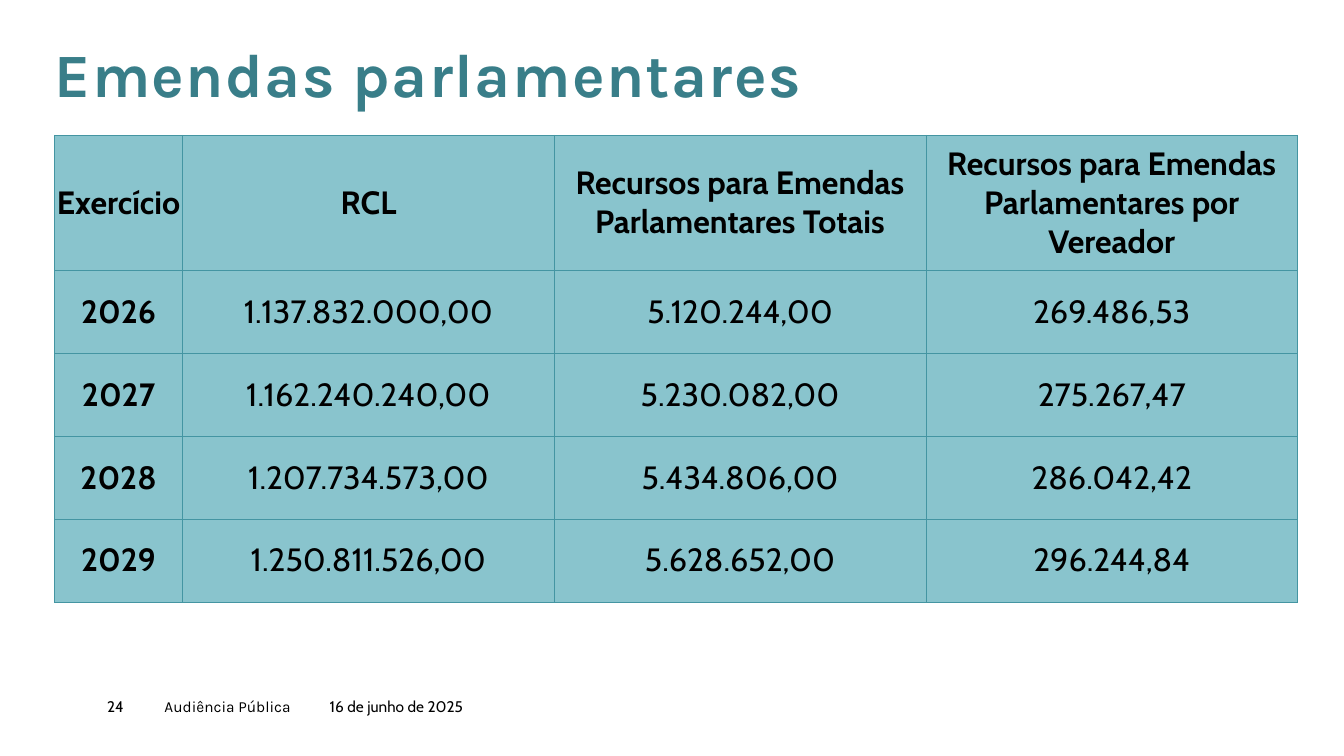
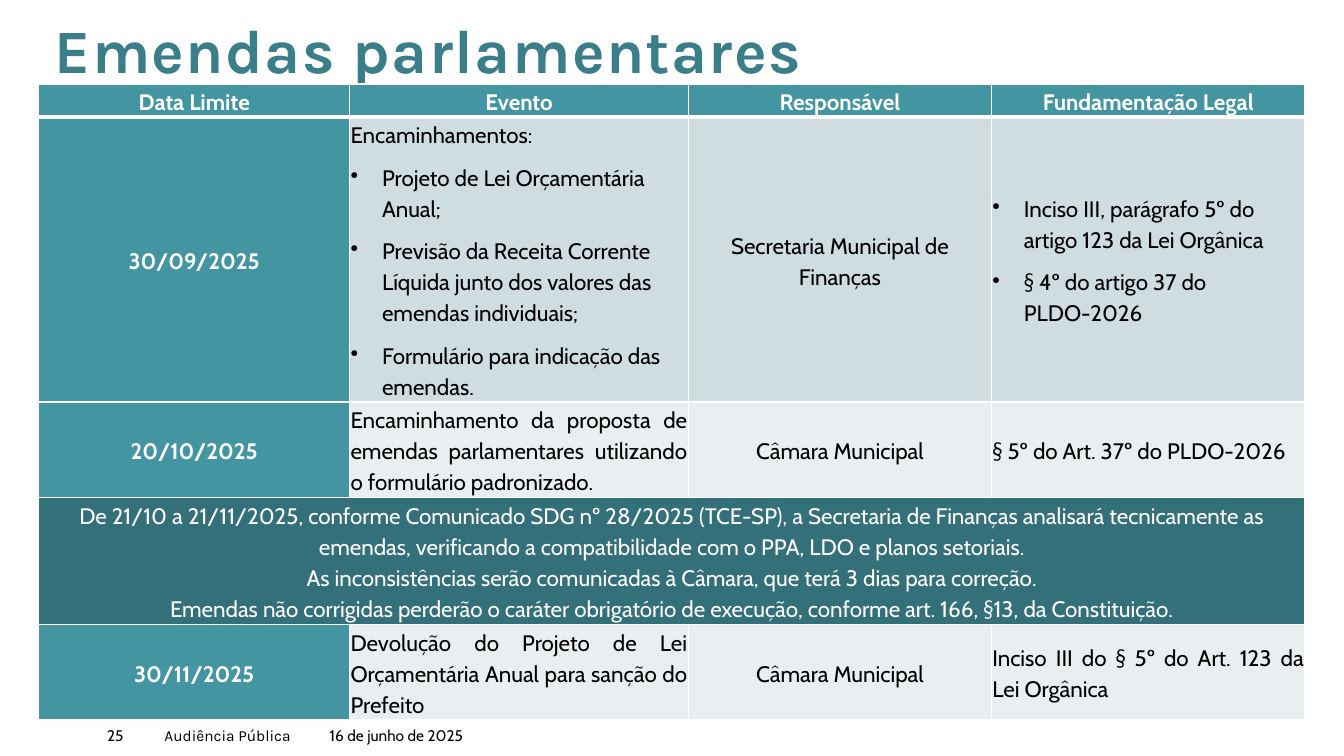
"""Build two slides on parliamentary amendments: yearly values and deadlines."""
import lxml.etree
import pptx
import pptx.dml.color
import pptx.enum.text
import pptx.oxml.ns
import pptx.util

Pt = pptx.util.Pt
RGBColor = pptx.dml.color.RGBColor
Align = pptx.enum.text.PP_ALIGN
Anchor = pptx.enum.text.MSO_ANCHOR
qn = pptx.oxml.ns.qn

BLACK = RGBColor(0x00, 0x00, 0x00)
WHITE = RGBColor(0xFF, 0xFF, 0xFF)
TITLE_TEAL = RGBColor(0x39, 0x7E, 0x89)
TEAL = RGBColor(0x44, 0x95, 0xA2)
DARK_TEAL = RGBColor(0x33, 0x70, 0x7A)
LIGHT_TEAL = RGBColor(0x89, 0xC4, 0xCD)
BAND_DARK = RGBColor(0xCF, 0xDD, 0xE0)
BAND_LIGHT = RGBColor(0xE9, 0xEF, 0xF0)

BODY_FONT = "Cabin"
TITLE_FONT = "Karla"
TITLE = "Emendas parlamentares"
BULLET = "• "
BULLET_INDENT = Pt(22.5)
CELL_MARGIN = Pt(0.7)

VALUES = [
    ["Exercício", "RCL", "Recursos para Emendas Parlamentares Totais",
     "Recursos para Emendas Parlamentares por Vereador"],
    ["2026", "1.137.832.000,00", "5.120.244,00", "269.486,53"],
    ["2027", "1.162.240.240,00", "5.230.082,00", "275.267,47"],
    ["2028", "1.207.734.573,00", "5.434.806,00", "286.042,42"],
    ["2029", "1.250.811.526,00", "5.628.652,00", "296.244,84"],
]

DEADLINES = [
    ["Data Limite", "Evento", "Responsável", "Fundamentação Legal"],
    ["30/09/2025",
     ["Encaminhamentos:",
      "• Projeto de Lei Orçamentária Anual;",
      "• Previsão da Receita Corrente Líquida junto dos valores das emendas individuais;",
      "• Formulário para indicação das emendas."],
     "Secretaria Municipal de Finanças",
     ["• Inciso III, parágrafo 5º do artigo 123 da Lei Orgânica",
      "• § 4º do artigo 37 do PLDO-2026"]],
    ["20/10/2025",
     "Encaminhamento da proposta de emendas parlamentares utilizando o formulário padronizado.",
     "Câmara Municipal", "§ 5º do Art. 37º do PLDO-2026"],
    ["De 21/10 a 21/11/2025, conforme Comunicado SDG nº 28/2025 (TCE-SP), a Secretaria de "
     "Finanças analisará tecnicamente as emendas, verificando a compatibilidade com o PPA, "
     "LDO e planos setoriais.\n"
     "As inconsistências serão comunicadas à Câmara, que terá 3 dias para correção.\n"
     "Emendas não corrigidas perderão o caráter obrigatório de execução, conforme art. 166, "
     "§13, da Constituição."],
    ["30/11/2025",
     "Devolução do Projeto de Lei Orçamentária Anual para sanção do Prefeito",
     "Câmara Municipal", "Inciso III do § 5º do Art. 123 da Lei Orgânica"],
]


def format_font(font, name, size, color, bold=False):
    """Set the face, size, colour and weight of a font."""
    font.name = name
    font.size = Pt(size)
    font.color.rgb = color
    font.bold = bold


def clear_margins(frame):
    """Remove the inner margins of a text frame and let it wrap."""
    frame.margin_left = frame.margin_top = frame.margin_right = frame.margin_bottom = 0
    frame.word_wrap = True
    frame.auto_size = pptx.enum.text.MSO_AUTO_SIZE.NONE


def add_titled_slide(presentation, title_top):
    """Add a slide with the shared title style."""
    slide = presentation.slides.add_slide(presentation.slide_layouts[5])
    title = slide.shapes.title
    title.left, title.top, title.width, title.height = Pt(39), Pt(title_top), Pt(765), Pt(64)
    frame = title.text_frame
    clear_margins(frame)
    frame.vertical_anchor = Anchor.BOTTOM
    paragraph = frame.paragraphs[0]
    paragraph.text = TITLE
    paragraph.alignment = Align.LEFT
    paragraph.line_spacing = 0.7
    format_font(paragraph.font, TITLE_FONT, 44, TITLE_TEAL, True)
    paragraph.runs[0].font._element.set("spc", "100")
    return slide


def add_footer(slide, number, top):
    """Add the page number, event name and date."""
    parts = [
        (76.5, 41, str(number), BODY_FONT),
        (117.5, 118, "Audiência Pública", TITLE_FONT),
        (235.5, 178, "16 de junho de 2025", BODY_FONT),
    ]
    for left, width, text, font_name in parts:
        box = slide.shapes.add_textbox(Pt(left), Pt(top), Pt(width), Pt(19.5))
        clear_margins(box.text_frame)
        paragraph = box.text_frame.paragraphs[0]
        paragraph.text = text
        format_font(paragraph.font, font_name, 11, BLACK)


def add_table(slide, left, top, widths, heights):
    """Add a table without style flags and return it."""
    table = slide.shapes.add_table(
        len(heights), len(widths), Pt(left), Pt(top), Pt(sum(widths)), Pt(sum(heights))).table
    table.first_row = table.horz_banding = False
    for column, width in zip(table.columns, widths):
        column.width = Pt(width)
    for row, height in zip(table.rows, heights):
        row.height = Pt(height)
    return table


def style_cell(cell, fill, border, width, top_width=None, bottom_width=None):
    """Set the borders, fill, margins and anchor of a cell."""
    properties = cell._tc.get_or_add_tcPr()
    sides = {"lnL": width, "lnR": width, "lnT": top_width or width, "lnB": bottom_width or width}
    for side, points in sides.items():
        line = lxml.etree.SubElement(properties, qn("a:" + side), w=str(Pt(points)))
        solid = lxml.etree.SubElement(line, qn("a:solidFill"))
        lxml.etree.SubElement(solid, qn("a:srgbClr"), val=str(border))
    cell.fill.solid()
    cell.fill.fore_color.rgb = fill
    cell.margin_left = cell.margin_top = cell.margin_right = cell.margin_bottom = CELL_MARGIN
    cell.vertical_anchor = Anchor.MIDDLE


def add_bullet(paragraph):
    """Give a paragraph a bullet with a hanging indent."""
    properties = paragraph._p.get_or_add_pPr()
    properties.set("marL", str(BULLET_INDENT))
    properties.set("indent", str(-BULLET_INDENT))
    lxml.etree.SubElement(properties, qn("a:buChar"), char=BULLET.strip())


def write_cell(cell, content, size, color, bold, alignment, line_spacing=None, space_after=None):
    """Write one text or a list of paragraphs into a cell."""
    lines = content if isinstance(content, list) else [content]
    frame = cell.text_frame
    for index, line in enumerate(lines):
        paragraph = frame.add_paragraph() if index else frame.paragraphs[0]
        paragraph.text = line.removeprefix(BULLET)
        if line.startswith(BULLET):
            add_bullet(paragraph)
        paragraph.alignment = alignment
        paragraph.line_spacing = line_spacing
        paragraph.space_after = space_after
        format_font(paragraph.font, BODY_FONT, size, color, bold)


def add_values_table(slide):
    """Add the table of yearly revenue and amendment values."""
    table = add_table(slide, 39, 96.5, [91.5] + [265.5] * 3, [96.5] + [59.25] * 4)
    for row, texts in enumerate(VALUES):
        for column, text in enumerate(texts):
            cell = table.cell(row, column)
            style_cell(cell, LIGHT_TEAL, TEAL, 0.5)
            write_cell(cell, text, 23, BLACK, row == 0 or column == 0, Align.CENTER)


def add_deadlines_table(slide):
    """Add the table of deadlines, events and legal grounds."""
    table = add_table(slide, 27.75, 60, [222, 242, 216.5, 224], [23.2, 203.6, 67.8, 90.8, 67.5])
    for row, contents in enumerate(DEADLINES):
        is_notice = len(contents) == 1
        if is_notice:
            table.cell(row, 0).merge(table.cell(row, 3))
        for column, content in enumerate(contents):
            cell = table.cell(row, column)
            is_heading = row == 0 or column == 0
            if is_notice:
                fill = DARK_TEAL
            elif is_heading:
                fill = TEAL
            else:
                fill = BAND_DARK if row == 1 else BAND_LIGHT
            if is_heading or column == 2:
                alignment = Align.CENTER
            else:
                alignment = Align.LEFT if isinstance(content, list) else Align.JUSTIFY
            style_cell(cell, fill, WHITE, 1, 3 if row == 1 else 1, 3 if row == 0 else 1)
            write_cell(cell, content, 16, WHITE if is_heading else BLACK,
                       is_heading and not is_notice, alignment, 1.15, Pt(8))


def main():
    """Build and save the presentation."""
    presentation = pptx.Presentation()
    presentation.slide_width, presentation.slide_height = Pt(960), Pt(540)
    pages = [
        (24, 13, 498.25, add_values_table),
        (25, -4.25, 518.5, add_deadlines_table),
    ]
    for number, title_top, footer_top, add_content in pages:
        slide = add_titled_slide(presentation, title_top)
        add_footer(slide, number, footer_top)
        add_content(slide)
    presentation.save("out.pptx")


if __name__ == "__main__":
    main()
